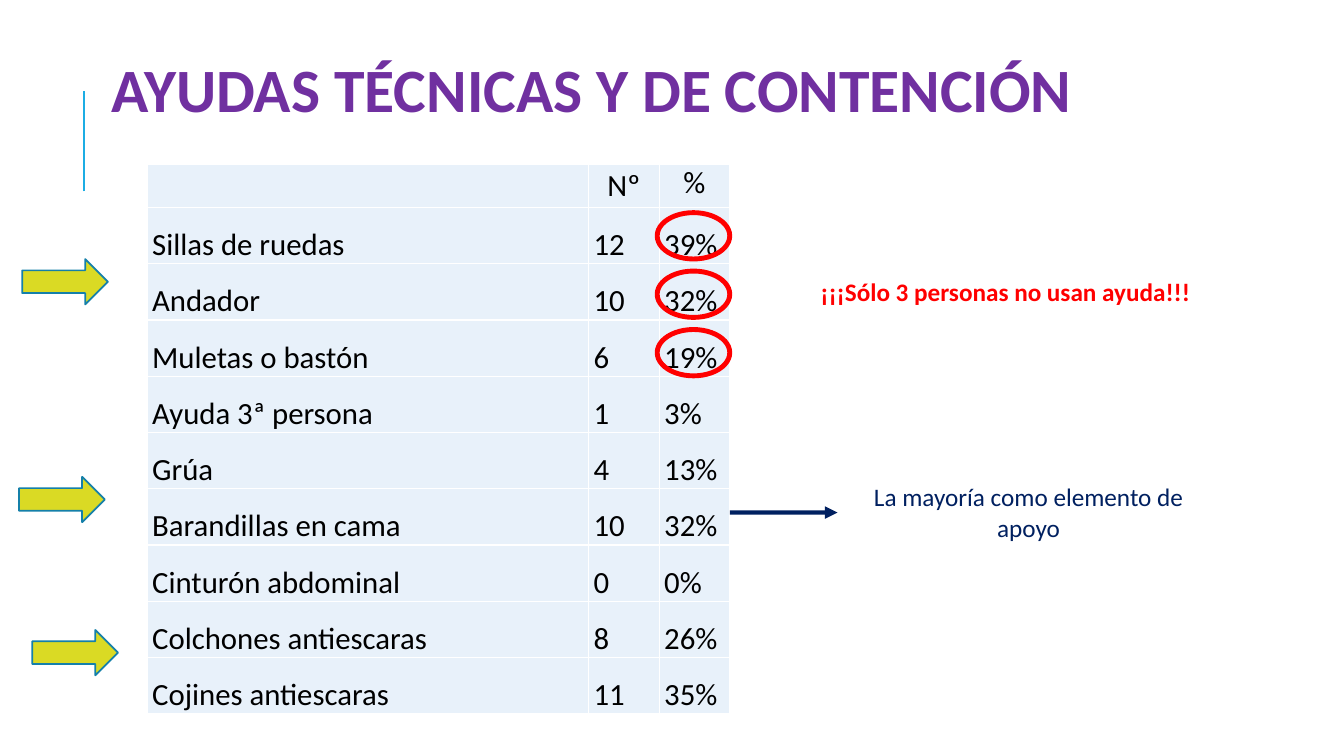
from lxml import etree
from pptx import Presentation
from pptx.dml.color import RGBColor
from pptx.enum.shapes import MSO_CONNECTOR, MSO_SHAPE
from pptx.enum.text import MSO_ANCHOR, PP_ALIGN
from pptx.oxml.ns import qn
from pptx.util import Inches, Pt

LEFT, MID, JUST = PP_ALIGN.LEFT, PP_ALIGN.CENTER, PP_ALIGN.JUSTIFY
TOP, CENTRE = MSO_ANCHOR.TOP, MSO_ANCHOR.MIDDLE
OVAL, ARROW = MSO_SHAPE.OVAL, MSO_SHAPE.RIGHT_ARROW
STRAIGHT = MSO_CONNECTOR.STRAIGHT

BLACK = RGBColor(0x00, 0x00, 0x00)
PURPLE = RGBColor(0x70, 0x30, 0xA0)
RED = RGBColor(0xFF, 0x00, 0x00)
NAVY = RGBColor(0x00, 0x20, 0x60)
CYAN = RGBColor(0x1C, 0xAD, 0xE4)
BLUE = RGBColor(0x15, 0x80, 0xA9)
LIME = RGBColor(0xDA, 0xDA, 0x24)
PALE = RGBColor(0xE8, 0xF1, 0xFA)

deck = Presentation()
deck.slide_width, deck.slide_height = Inches(13.33), Inches(7.5)
slide = deck.slides.add_slide(deck.slide_layouts[5])
shapes = slide.shapes


def grid(*spans):
    """Turn x, y, width, height in hundredths of the slide into lengths."""
    sides = (deck.slide_width, deck.slide_height) * 2
    return [int(side * span / 100) for side, span in zip(sides, spans)]


def write(frame, text, size, color, bold=False, align=LEFT, space=1.0):
    para = frame.paragraphs[0]
    para.alignment, para.line_spacing = align, space
    run = para.add_run()
    run.text = text
    font = run.font
    font.name, font.size, font.bold = "Calibri", Pt(size), bold
    font.color.rgb = color


# Title
title = shapes.title
title.left, title.top, title.width, title.height = grid(7.58, 6.13, 87.98, 11.2)
title.text_frame.vertical_anchor = TOP
write(title.text_frame, "AYUDAS TÉCNICAS Y DE CONTENCIÓN", 44, PURPLE, True)

# Table of aids
aids = [
    ("", "Nº", "%"),
    ("Sillas de ruedas", "12", "39%"),
    ("Andador", "10", "32%"),
    ("Muletas o bastón", "6", "19%"),
    ("Ayuda 3ª persona", "1", "3%"),
    ("Grúa", "4", "13%"),
    ("Barandillas en cama", "10", "32%"),
    ("Cinturón abdominal", "0", "0%"),
    ("Colchones antiescaras", "8", "26%"),
    ("Cojines antiescaras", "11", "35%"),
]
place = grid(10.95, 21.73, 43.35, 5.73 * len(aids))
table = shapes.add_table(len(aids), 3, *place).table
table.first_row = table.horz_banding = False
for col, wide in zip(table.columns, (32.85, 5.25, 5.25)):
    col.width = grid(wide)[0]

for i, aid in enumerate(aids):
    for j, text in enumerate(aid):
        cell = table.cell(i, j)
        cell.margin_left = cell.margin_right = Inches(0.05)
        cell.margin_top = cell.margin_bottom = 0
        cell.vertical_anchor = TOP if (i, j) == (0, 2) else CENTRE
        if text:
            align, space = (JUST, 1.5) if i else (MID, 1.0)
            write(cell.text_frame, text, 22, BLACK, False, align, space)
        # White borders come before the fill in the cell's XML
        props = cell._tc.get_or_add_tcPr()
        for side in ("a:lnL", "a:lnR", "a:lnT", "a:lnB"):
            edge = etree.SubElement(props, qn(side), w=str(Pt(1)))
            paint = etree.SubElement(edge, qn("a:solidFill"))
            etree.SubElement(paint, qn("a:srgbClr"), val="FFFFFF")
        cell.fill.solid()
        cell.fill.fore_color.rgb = PALE

# Rings round the top shares, arrows at the left edge
marks = [(OVAL, 48.9, 28.13 + 7.73 * i, 5.4, 6.13, None, RED, 3.5)
         for i in range(3)]
marks += [(ARROW, x, y, 6.38, 6, LIME, BLUE, 1.25)
          for x, y in ((1.65, 34.27), (1.42, 63.07), (2.4, 83.33))]
for kind, x, y, wide, high, fill, color, weight in marks:
    mark = shapes.add_shape(kind, *grid(x, y, wide, high))
    mark.shadow.inherit = False
    if fill is None:
        mark.fill.background()
    else:
        mark.fill.solid()
        mark.fill.fore_color.rgb = fill
    mark.line.color.rgb = color
    mark.line.width = Pt(weight)

# Remarks at the right
notes = [
    ("¡¡¡Sólo 3 personas no usan ayuda!!!", 60.3, 35.87, 37.2, 5.33,
     RED, True, LEFT),
    ("La mayoría como elemento de apoyo", 62.32, 63.07, 28.42, 9.47,
     NAVY, False, MID),
]
for text, x, y, wide, high, color, bold, align in notes:
    note = shapes.add_textbox(*grid(x, y, wide, high))
    note.text_frame.word_wrap = True
    write(note.text_frame, text, 18, color, bold, align)

# Rule beside the title, pointer from the table to the last remark
rule = shapes.add_connector(STRAIGHT, *grid(6.22, 25.33, 6.22, 12))
link = shapes.add_connector(STRAIGHT, *grid(54.3, 67.8, 62.32, 67.8))
link.end_connect(note, 1)
for line, color, weight in ((rule, CYAN, 1.5), (link, NAVY, 3)):
    line.line.color.rgb = color
    line.line.width = Pt(weight)
    etree.SubElement(line._element.spPr, qn("a:effectLst"))
etree.SubElement(link.line._get_or_add_ln(), qn("a:tailEnd"), type="triangle")

deck.save("out.pptx")
